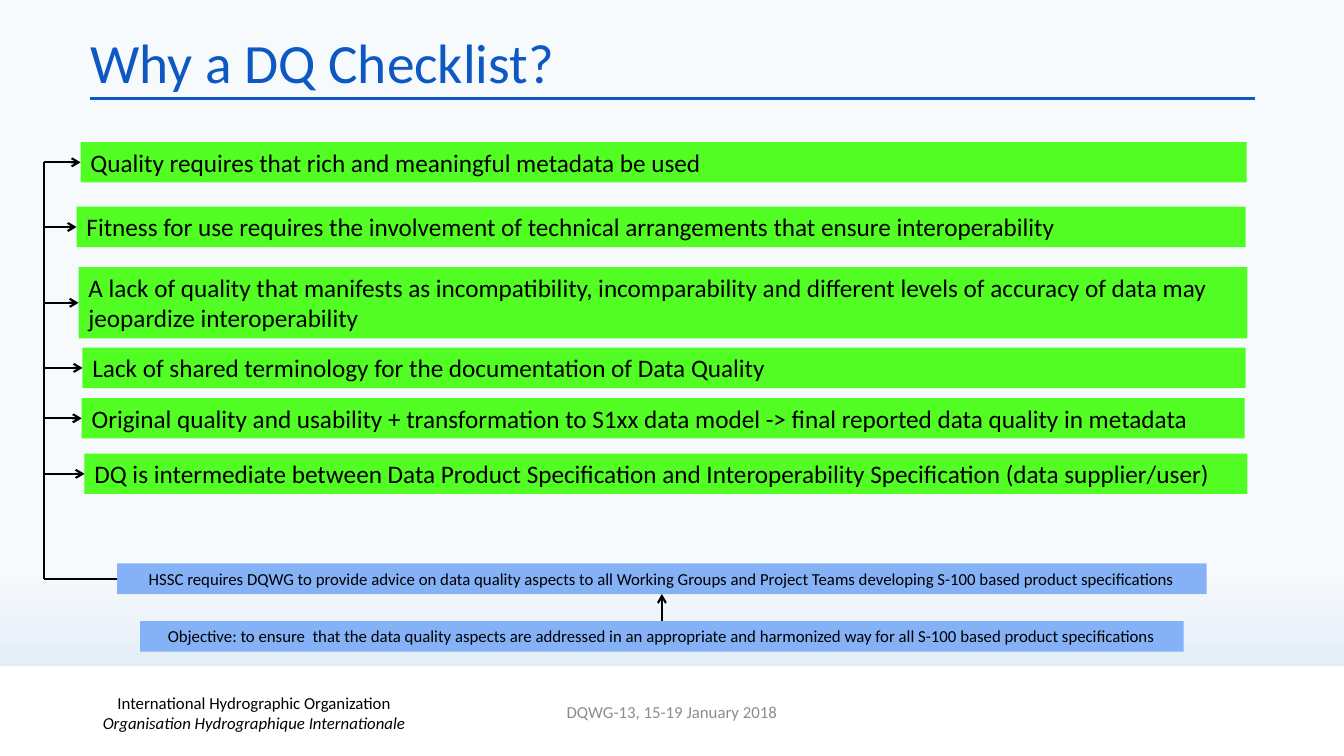
from collections import namedtuple
from dataclasses import dataclass

from lxml.etree import SubElement
from pptx import Presentation
from pptx.dml.color import RGBColor as Color
from pptx.enum.shapes import MSO_CONNECTOR as Connector, MSO_SHAPE as Shape
from pptx.enum.text import MSO_ANCHOR as Anchor, MSO_AUTO_SIZE as Fit, PP_ALIGN as Align
from pptx.oxml.ns import qn
from pptx.util import Cm, Pt

Box = namedtuple("Box", "left top width height")
Reason = namedtuple("Reason", "left top width height text")
TOP, LEFT, BOTTOM = 0, 1, 2


@dataclass(frozen=True)
class Theme:
    """Colours, font and type sizes of the slide."""
    font: str = "Calibri"
    blue: Color = Color(0x0E, 0x58, 0xC4)
    green: Color = Color(0x52, 0xFD, 0x23)
    sky: Color = Color(0x85, 0xB2, 0xF6)
    grey: Color = Color(0x8C, 0x8C, 0x8C)
    black: Color = Color(0, 0, 0)
    white: Color = Color(255, 255, 255)
    fade_start: Color = Color(0xF7, 0xFA, 0xFD)
    fade_end: Color = Color(0xD0, 0xE2, 0xF1)
    title: float = 39.6
    body: float = 18
    small: float = 12
    rule: float = 2.25
    link: float = 1.5


THEME = Theme()

REASONS = [
    Reason(0.1, 0, 29.39, 1.02, "Quality requires that rich and meaningful metadata be used"),
    Reason(0, 1.63, 29.46, 1.02, "Fitness for use requires the involvement of technical "
           "arrangements that ensure interoperability"),
    Reason(0.05, 3.15, 29.46, 1.8, "A lack of quality that manifests as incompatibility, "
           "incomparability and different levels of accuracy of data may jeopardize "
           "interoperability"),
    Reason(0.15, 5.18, 29.31, 1.02, "Lack of shared terminology for the documentation of "
           "Data Quality"),
    Reason(0.13, 6.45, 29.31, 1.02, "Original quality and usability + transformation to S1xx "
           "data model -> final reported data quality in metadata"),
    Reason(0.2, 7.85, 29.31, 1.02, "DQ is intermediate between Data Product Specification and "
           "Interoperability Specification (data supplier/user)"),
]
MANDATE = ("HSSC requires DQWG to provide advice on data quality aspects to all Working Groups "
           "and Project Teams developing S-100 based product specifications")
OBJECTIVE = ("Objective: to ensure  that the data quality aspects are addressed in an appropriate "
             "and harmonized way for all S-100 based product specifications")


def apply(target, values):
    """Set every attribute named in values on target."""
    for name, value in values.items():
        setattr(target, name, value)


def add_span(para, text, size, color, italic=None):
    """Append one formatted run to a paragraph."""
    span = para.add_run()
    span.text = text
    apply(span.font, {"name": THEME.font, "size": Pt(size), "italic": italic})
    span.font.color.rgb = color


def add_label(page, box):
    """Add an empty text box centred vertically and return its first paragraph."""
    label = page.shapes.add_textbox(*map(Cm, box))
    apply(label.text_frame, {"word_wrap": True, "vertical_anchor": Anchor.MIDDLE})
    return label.text_frame.paragraphs[0]


def add_block(page, box, fill):
    """Add a plain filled rectangle."""
    block = page.shapes.add_shape(Shape.RECTANGLE, *map(Cm, box))
    block.shadow.inherit = False
    block.fill.solid()
    block.fill.fore_color.rgb = fill
    block.line.fill.background()
    return block


def add_bar(page, box, fill, text, size, align):
    """Add a filled rectangle that carries one paragraph."""
    bar = add_block(page, box, fill)
    apply(bar.text_frame, {"word_wrap": True, "vertical_anchor": Anchor.TOP,
                           "auto_size": Fit.SHAPE_TO_FIT_TEXT})
    para = bar.text_frame.paragraphs[0]
    para.alignment = align
    add_span(para, text, size, THEME.black)
    return bar


def add_line(page, start, end, color=THEME.black, weight=THEME.link, arrow=False):
    """Add a straight line between two points, with an optional arrowhead."""
    line = page.shapes.add_connector(Connector.STRAIGHT, *start, *end)
    line.line.color.rgb = color
    line.line.width = Pt(weight)
    properties = line.line.fill and line._element.spPr
    if arrow:
        SubElement(properties.find(qn("a:ln")), qn("a:tailEnd"), type="arrow")
    SubElement(properties, qn("a:effectLst"))
    return line


def add_background(page):
    """Fade the page towards its foot."""
    fill = page.background.fill
    fill.gradient()
    fill.gradient_angle = 270
    stops = ((0.75, THEME.fade_start), (1, THEME.fade_end))
    for stop, (position, color) in zip(fill.gradient_stops, stops):
        stop.position = position
        stop.color.rgb = color


def add_title(page, box):
    """Place the title and the rule below it."""
    para = add_label(page, box._replace(width=24.94))
    para.line_spacing = 0.9
    add_span(para, "Why a DQ Checklist?", THEME.title, THEME.blue)
    height = Cm(box.top + 1.73)
    add_line(page, (Cm(box.left + 0.23), height), (Cm(box.left + box.width), height),
             THEME.blue, THEME.rule)


def add_reasons(page, box):
    """Stack the green reason bars and return them."""
    return [add_bar(page, Box(box.left + reason.left, box.top + reason.top,
                              reason.width, reason.height),
                    THEME.green, reason.text, THEME.body, Align.LEFT)
            for reason in REASONS]


def add_mandate(page, box):
    """Place the mandate above its objective, joined by an arrow, and return the mandate."""
    height, inset = 0.77, 0.58
    upper = box._replace(height=height)
    lower = Box(box.left + inset, box.top + box.height - height,
                box.width - 2 * inset, height)
    mandate, objective = (
        add_bar(page, place, THEME.sky, text, THEME.small, Align.CENTER)
        for place, text in ((upper, MANDATE), (lower, OBJECTIVE)))
    middle = Cm(box.left + box.width / 2)
    arrow = add_line(page, (middle, objective.top), (middle, mandate.top + mandate.height),
                     arrow=True)
    arrow.begin_connect(objective, TOP)
    arrow.end_connect(mandate, BOTTOM)
    return mandate


def add_links(page, spine, mandate, reasons):
    """Lead from the mandate along a spine to every reason."""
    heights = [bar.top + bar.height // 2 for bar in (mandate, *reasons)]
    stem = add_line(page, (mandate.left, heights[0]), (spine, heights[0]))
    stem.begin_connect(mandate, LEFT)
    add_line(page, (spine, heights[0]), (spine, heights[1]))
    for bar, height in zip(reasons, heights[1:]):
        arrow = add_line(page, (spine, height), (bar.left, height), arrow=True)
        arrow.end_connect(bar, LEFT)


def add_footer(page, box):
    """Place the white band with the organization and the meeting."""
    add_block(page, box, THEME.white)
    width, height = 11.43, 1.02
    organization = add_label(page, Box(box.left + 0.69, box.top + 0.66, width, height))
    add_span(organization, "International Hydrographic Organization", THEME.small, THEME.black)
    organization.add_line_break()
    add_span(organization, "Organisation Hydrographique Internationale", THEME.small,
             THEME.black, italic=True)
    meeting = add_label(page, Box(box.left + (box.width - width) / 2, box.top + 0.63,
                                  width, height))
    add_span(meeting, "DQWG-13, 15-19 January 2018", THEME.small, THEME.grey)
    for para in (organization, meeting):
        para.alignment = Align.CENTER


def main():
    """Build the slide and save it."""
    deck = Presentation()
    apply(deck, {"slide_width": Cm(33.87), "slide_height": Cm(19.05)})
    page = deck.slides.add_slide(deck.slide_layouts[6])
    add_background(page)
    add_footer(page, Box(0, 16.79, 33.87, 2.26))
    add_title(page, Box(2.03, 0.76, 29.59, 1.78))
    mandate = add_mandate(page, Box(2.95, 14.2, 27.46, 2.22))
    reasons = add_reasons(page, Box(1.93, 3.58, 29.51, 8.87))
    add_links(page, Cm(1.12), mandate, reasons)
    deck.save("out.pptx")


if __name__ == "__main__":
    main()
